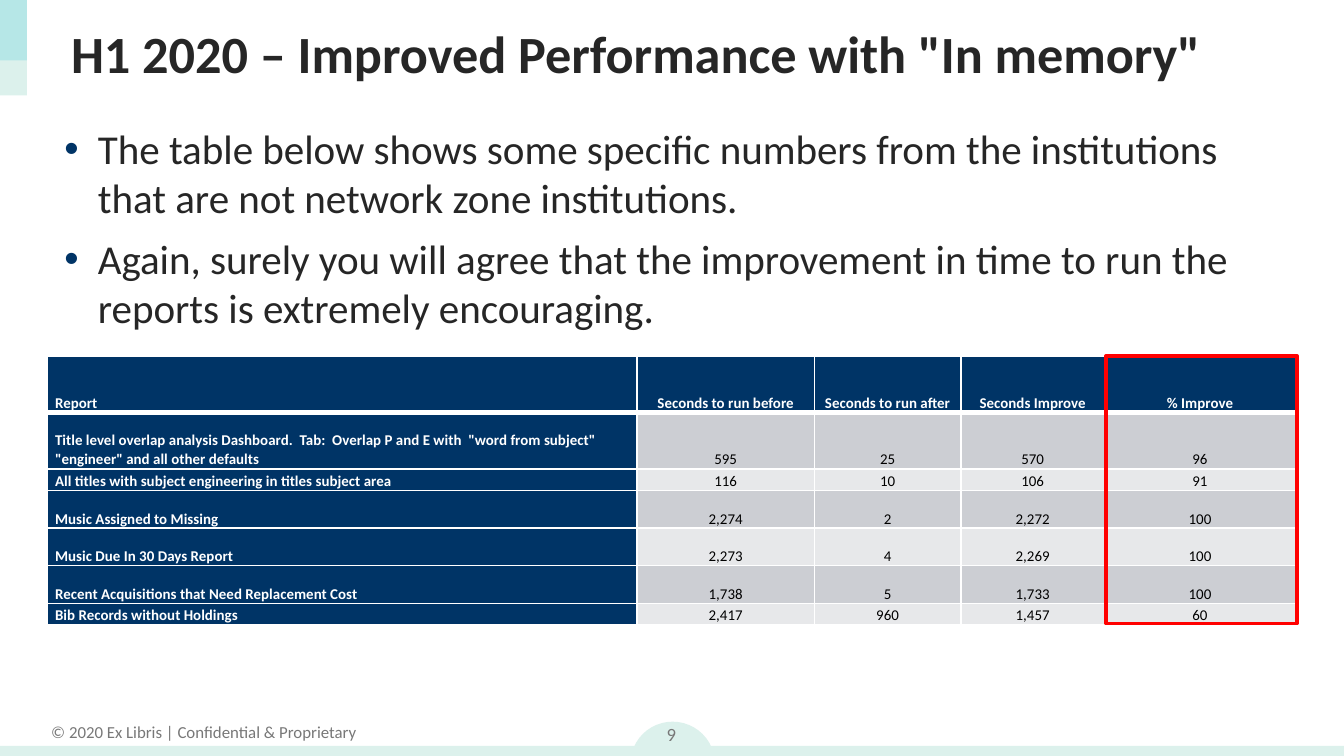
from dataclasses import dataclass

from lxml.etree import SubElement
from pptx import Presentation
from pptx.dml.color import RGBColor
from pptx.enum.shapes import MSO_SHAPE
from pptx.enum.text import MSO_ANCHOR, PP_ALIGN
from pptx.oxml.ns import qn
from pptx.util import Inches, Pt


@dataclass(frozen=True)
class Theme:
    font: str = "Calibri"
    navy: str = "003466"
    mint: str = "DCF1EC"
    aqua: str = "50CFDA"
    ink: str = "262626"
    gray: str = "787878"
    black: str = "000000"
    white: str = "FFFFFF"
    red: str = "FF0000"
    bands: tuple = ("CCCED3", "E7E8EA")
    title: int = 28
    body: int = 22
    page: int = 10
    foot: int = 9
    cell: int = 8


THEME = Theme()

WIDTH = Inches(10)
HEIGHT = WIDTH * 9 // 16
TITLE = 'H1 2020 – Improved Performance with "In memory"'
POINTS = [
    "The table below shows some specific numbers from the institutions "
    "that are not network zone institutions.",
    "Again, surely you will agree that the improvement in time to run "
    "the reports is extremely encouraging.",
]
COLS = [4.39, 1.32, 1.09, 1.07, 1.42]
ROWS = [0.42, 0.42, 0.16, 0.28, 0.28, 0.28, 0.16]
LEFT, TOP = 0.35, 2.65
DATA = [
    ("Report", "Seconds to run before", "Seconds to run after",
     "Seconds Improve", "% Improve"),
    ('Title level overlap analysis Dashboard.  Tab:  Overlap P and E with  '
     '"word from subject" "engineer" and all other defaults',
     "595", "25", "570", "96"),
    ("All titles with subject engineering in titles subject area",
     "116", "10", "106", "91"),
    ("Music Assigned to Missing", "2,274", "2", "2,272", "100"),
    ("Music Due In 30 Days Report", "2,273", "4", "2,269", "100"),
    ("Recent Acquisitions that Need Replacement Cost",
     "1,738", "5", "1,733", "100"),
    ("Bib Records without Holdings", "2,417", "960", "1,457", "60"),
]


def apply(item, form):
    for key, value in form.items():
        setattr(item, key, value)


def paint(fill, color):
    fill.solid()
    fill.fore_color.rgb = RGBColor.from_string(color)


def style(para, size, color, bold=False):
    apply(para.font, {"name": THEME.font, "size": Pt(size), "bold": bold})
    para.font.color.rgb = RGBColor.from_string(color)


def add_block(slide, kind, box, color, alpha=None):
    shape = slide.shapes.add_shape(kind, *map(Inches, box))
    shape.shadow.inherit = False
    paint(shape.fill, color)
    shape.line.fill.background()
    if alpha:
        tint = shape.fill._xPr.find(".//" + qn("a:srgbClr"))
        SubElement(tint, qn("a:alpha"), val=str(alpha * 1000))


def add_frame(slide, box):
    shape = slide.shapes.add_shape(MSO_SHAPE.RECTANGLE, *map(Inches, box))
    shape.shadow.inherit = False
    shape.fill.background()
    shape.line.color.rgb = RGBColor.from_string(THEME.red)
    shape.line.width = Pt(2)


def add_text(slide, box, text, size, color, bold=False, align=PP_ALIGN.LEFT,
             anchor=MSO_ANCHOR.MIDDLE, wrap=True):
    frame = slide.shapes.add_textbox(*map(Inches, box)).text_frame
    apply(frame, {"word_wrap": wrap, "vertical_anchor": anchor, "text": text})
    para = frame.paragraphs[0]
    para.alignment = align
    style(para, size, color, bold)


def add_bullets(slide, box, points):
    frame = slide.shapes.add_textbox(*map(Inches, box)).text_frame
    frame.word_wrap = True
    for i, point in enumerate(points):
        para = frame.add_paragraph() if i else frame.paragraphs[0]
        para.text = point
        if i:
            para.space_before = Pt(6)
        props = para._p.get_or_add_pPr()
        props.set("marL", str(Inches(0.25)))
        props.set("indent", str(-Inches(0.25)))
        tint = SubElement(props, qn("a:buClr"))
        SubElement(tint, qn("a:srgbClr"), val=THEME.navy)
        SubElement(props, qn("a:buFont"), typeface="Arial")
        SubElement(props, qn("a:buChar"), char="•")
        style(para, THEME.body, THEME.ink)


def add_edge(cell, side, width):
    props = cell._tc.get_or_add_tcPr()
    line = SubElement(props, qn("a:ln" + side), w=str(Pt(width)))
    fill = SubElement(line, qn("a:solidFill"))
    SubElement(fill, qn("a:srgbClr"), val=THEME.white)


def fill_cell(cell, text, row, col):
    head = row == 0 or col == 0
    apply(cell, {
        "text": text, "vertical_anchor": MSO_ANCHOR.BOTTOM,
        "margin_left": Inches(0.06), "margin_right": Inches(0.06),
        "margin_top": 0, "margin_bottom": 0,
    })
    para = cell.text_frame.paragraphs[0]
    apply(para, {
        "alignment": PP_ALIGN.CENTER if col else PP_ALIGN.LEFT,
        "line_spacing": 1.07,
    })
    style(para, THEME.cell, THEME.white if head else THEME.black, head)
    for side in "LRTB":
        thick = (row, side) in ((0, "B"), (1, "T"))
        add_edge(cell, side, 3 if thick else 1)
    paint(cell.fill, THEME.navy if head else THEME.bands[(row - 1) % 2])


def add_grid(slide):
    box = (LEFT, TOP, sum(COLS), sum(ROWS))
    grid = slide.shapes.add_table(
        len(ROWS), len(COLS), *map(Inches, box)).table
    for col, width in zip(grid.columns, COLS):
        col.width = Inches(width)
    for row, height in zip(grid.rows, ROWS):
        row.height = Inches(height)
    for i, line in enumerate(DATA):
        for j, text in enumerate(line):
            fill_cell(grid.cell(i, j), text, i, j)


def main():
    deck = Presentation()
    apply(deck, {"slide_width": WIDTH, "slide_height": HEIGHT})
    slide = deck.slides.add_slide(deck.slide_layouts[6])
    add_block(slide, MSO_SHAPE.OVAL, (4.69, 5.37, 0.63, 0.63), THEME.mint)
    add_text(slide, (0.27, 5.32, 2.49, 0.25),
             "© 2020 Ex Libris | Confidential & Proprietary",
             THEME.foot, THEME.gray, align=PP_ALIGN.CENTER,
             anchor=MSO_ANCHOR.TOP, wrap=False)
    bar = MSO_SHAPE.RECTANGLE
    add_block(slide, bar, (0, 5.55, 10, 0.11), THEME.mint)
    add_block(slide, bar, (0, 0, 0.2, 0.71), THEME.mint)
    add_block(slide, bar, (0, 0, 0.2, 0.45), THEME.aqua, alpha=27)
    add_text(slide, (4.7, 5.26, 0.59, 0.4), "9", THEME.page, THEME.gray,
             align=PP_ALIGN.CENTER)
    add_text(slide, (0.43, 0.08, 9.21, 0.63), TITLE, THEME.title, THEME.ink,
             bold=True)
    add_bullets(slide, (0.38, 0.87, 9.21, 1.73), POINTS)
    add_grid(slide)
    add_frame(slide, (8.23, TOP, COLS[-1], 1.99))
    deck.save("out.pptx")


if __name__ == "__main__":
    main()
